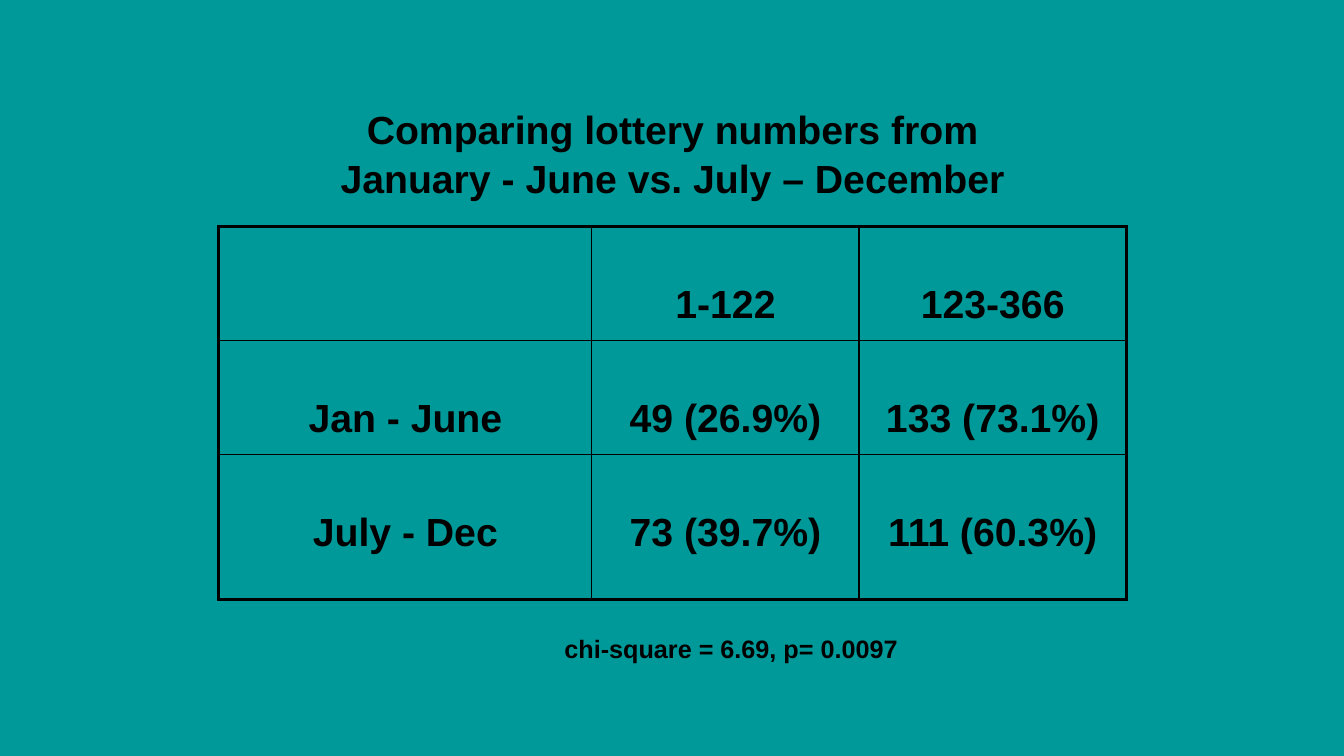
from dataclasses import dataclass

from lxml import etree
from pptx import Presentation
from pptx import util as u
from pptx.dml.color import RGBColor
from pptx.enum import text
from pptx.oxml import ns


@dataclass(frozen=True)
class Theme:
    background: str = "009999"
    ink: str = "000000"
    font: str = "Arial"
    large: int = 28
    small: int = 18
    outer_line: float = 2.25
    inner_line: float = 1


THEME = Theme()
COLUMN_WIDTHS = (3.7, 2.65, 2.65)
ROW_HEIGHTS = (1.13, 1.13, 1.44)
LOTTERY_ROWS = (
    ("", "1-122", "123-366"),
    ("Jan - June", "49 (26.9%)", "133 (73.1%)"),
    ("July - Dec", "73 (39.7%)", "111 (60.3%)"),
)


def write_text(frame, content, size=THEME.large, align=text.PP_ALIGN.CENTER, gap=0):
    """Fill a text frame, one paragraph for each line of content."""
    frame.word_wrap = True
    for index, line in enumerate(content.split("\n")):
        paragraph = frame.add_paragraph() if index else frame.paragraphs[0]
        paragraph.alignment = align
        paragraph.space_before = u.Pt(gap if index else 0)
        paragraph.font.size = u.Pt(size)
        if line:
            run = paragraph.add_run()
            run.text = line
            run.font.name = THEME.font
            run.font.size = u.Pt(size)
            run.font.bold = True
            run.font.color.rgb = RGBColor.from_string(THEME.ink)


def add_text(slide, content, left, top, width, height, **text_format):
    shape = slide.shapes.add_textbox(*map(u.Inches, (left, top, width, height)))
    write_text(shape.text_frame, content, **text_format)
    return shape


def set_borders(cell, **widths):
    """Draw the cell's edges; borders must come before the fill in the XML."""
    properties = cell._tc.get_or_add_tcPr()
    for index, (edge, width) in enumerate(widths.items()):
        line = etree.Element(ns.qn(f"a:{edge}"), w=str(u.Pt(width)))
        fill = etree.SubElement(line, ns.qn("a:solidFill"))
        etree.SubElement(fill, ns.qn("a:srgbClr"), val=THEME.ink)
        properties.insert(index, line)


def add_lottery_table(slide, rows, left, top):
    row_count, column_count = len(rows), len(rows[0])
    size = (left, top, sum(COLUMN_WIDTHS), sum(ROW_HEIGHTS))
    table = slide.shapes.add_table(row_count, column_count, *map(u.Inches, size)).table
    table.first_row = table.horz_banding = False
    for column, width in zip(table.columns, COLUMN_WIDTHS):
        column.width = u.Inches(width)
    for row, height in zip(table.rows, ROW_HEIGHTS):
        row.height = u.Inches(height)

    def line_width(is_outer):
        return THEME.outer_line if is_outer else THEME.inner_line

    for r, values in enumerate(rows):
        for c, value in enumerate(values):
            cell = table.cell(r, c)
            cell.fill.background()
            cell.margin_top = u.Inches(0.56)
            write_text(cell.text_frame, value)
            set_borders(
                cell,
                lnL=line_width(c == 0),
                lnR=line_width(c == column_count - 1),
                lnT=line_width(r == 0),
                lnB=line_width(r == row_count - 1),
            )


def main():
    presentation = Presentation()
    presentation.slide_width = u.Inches(13.33)
    presentation.slide_height = u.Inches(7.5)
    slide = presentation.slides.add_slide(presentation.slide_layouts[6])
    slide.background.fill.solid()
    slide.background.fill.fore_color.rgb = RGBColor.from_string(THEME.background)

    # Title
    add_text(slide, "Comparing lottery numbers from\nJanuary - June vs. July – December",
             2.17, 1, 9, 1.05, gap=1.2)

    # Counts by half-year
    add_lottery_table(slide, LOTTERY_ROWS, 2.17, 2.25)

    # Test result
    add_text(slide, "chi-square = 6.69, p= 0.0097", 5.5, 6.23, 3.51, 0.4,
             size=THEME.small, align=text.PP_ALIGN.LEFT)

    presentation.save("out.pptx")


if __name__ == "__main__":
    main()
